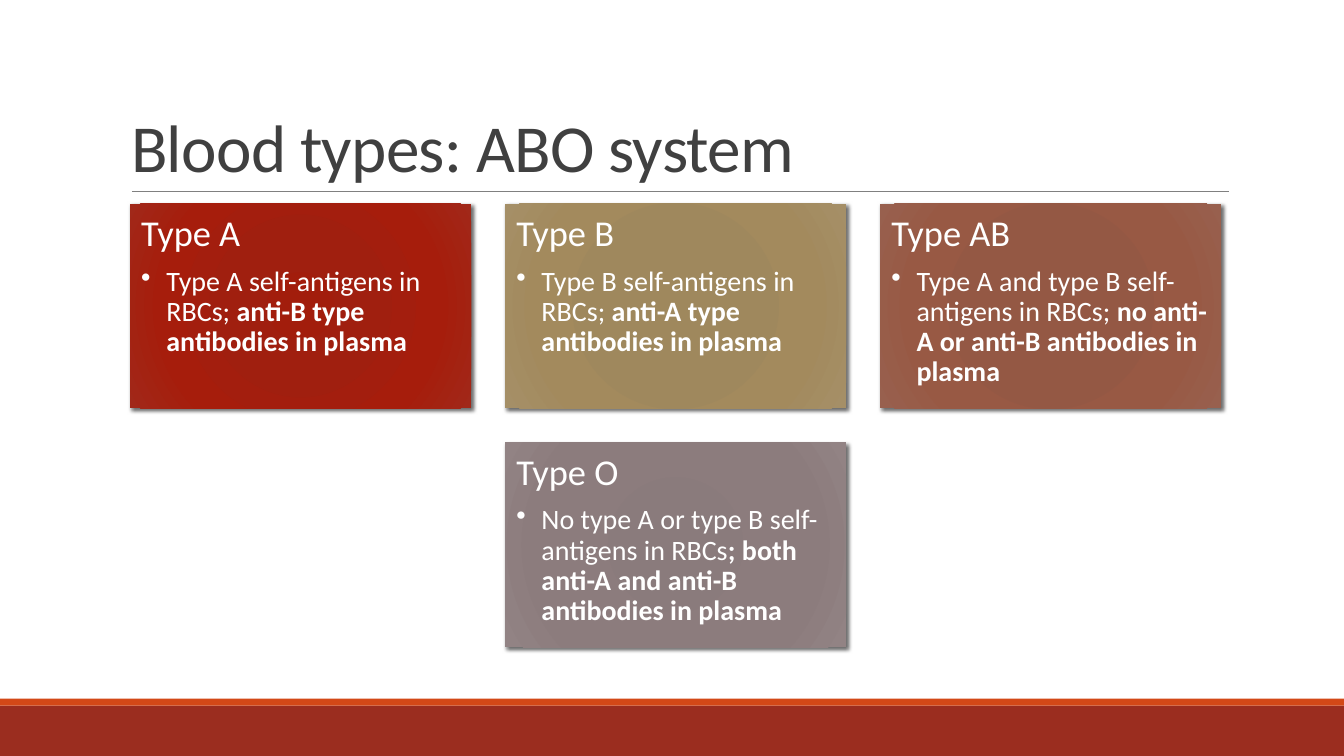
from lxml.etree import SubElement
from pptx import Presentation
from pptx.dml.color import RGBColor
from pptx.enum.shapes import MSO_CONNECTOR as LINE, MSO_SHAPE as SHAPE
from pptx.enum.text import MSO_ANCHOR as ANCHOR, MSO_AUTO_SIZE as FIT, PP_ALIGN as ALIGN
from pptx.oxml import parse_xml
from pptx.oxml.ns import nsdecls, qn
from pptx.util import Pt

WIDTH, HEIGHT = 960, 540
COLORS = {
    "title": "404040", "rule": "808080", "text": "FFFFFF",
    "band": "9B2D1F", "stripe": "D34817", "shadow": "000000",
}
STOPS = (0, 34, 70, 100)
CARD_WIDTH, CARD_HEIGHT = 243.6, 146.2
COLUMN_STEP, ROW_STEP = 267.9, 170.6

# Column, row, heading, plain text, bold text, gradient
BLOOD_TYPES = [
    (0, 0, "Type A", "Type A self-antigens in RBCs; ",
     "anti-B type antibodies in plasma",
     ("A21D0C", "A01F0F", "A61D0C", "A12819")),
    (1, 0, "Type B", "Type B self-antigens in RBCs; ",
     "anti-A type antibodies in plasma",
     ("9F875B", "9F885D", "A38A5D", "A58F67")),
    (2, 0, "Type AB", "Type A and type B self-antigens in RBCs; ",
     "no anti-A or anti-B antibodies in plasma",
     ("945742", "945844", "985944", "98604E")),
    (1, 1, "Type O", "No type A or type B self-antigens in RBCs",
     "; both anti-A and anti-B antibodies in plasma",
     ("89797A", "8A7B7C", "8C7C7D", "928384")),
]


def set_all(target, **values):
    for name, value in values.items():
        setattr(target, name, value)


def add_span(para, text, size, color, bold=False):
    span = para.add_run()
    span.text = text
    set_all(span.font, name="Calibri", size=Pt(size), bold=bold)
    span.font.color.rgb = RGBColor.from_string(COLORS[color])
    return span


def add_rectangle(page, box):
    shape = page.shapes.add_shape(SHAPE.RECTANGLE, *map(Pt, box))
    shape.shadow.inherit = False
    shape.line.fill.background()
    return shape


def add_footer(page, box):
    left, top, width, height = box
    stripe_height = 5
    parts = (("band", top + stripe_height, height - stripe_height),
             ("stripe", top, stripe_height))
    for color, part_top, part_height in parts:
        bar = add_rectangle(page, (left, part_top, width, part_height))
        bar.fill.solid()
        bar.fill.fore_color.rgb = RGBColor.from_string(COLORS[color])


def add_title(page, box):
    left, top, width, height = box
    title = page.shapes.title
    set_all(title, left=Pt(left), top=Pt(top), width=Pt(width), height=Pt(height))
    set_all(title.text_frame, vertical_anchor=ANCHOR.BOTTOM, word_wrap=True,
            auto_size=FIT.NONE)
    para = title.text_frame.paragraphs[0]
    set_all(para, alignment=ALIGN.LEFT, line_spacing=0.85)
    span = add_span(para, "Blood types: ABO system", 48, "title")
    span.font._element.set("spc", "-50")

    # Rule under the title
    bottom = top + height
    rule = page.shapes.add_connector(
        LINE.STRAIGHT, Pt(left + 7.9), Pt(bottom), Pt(left + width - 0.7), Pt(bottom))
    rule.line.width = Pt(0.5)
    rule.line.color.rgb = RGBColor.from_string(COLORS["rule"])
    SubElement(rule._element.spPr, qn("a:effectLst"))


def set_gradient(shape, colors):
    stops = "".join(
        f'<a:gs pos="{stop * 1000}"><a:srgbClr val="{color}"/></a:gs>'
        for stop, color in zip(STOPS, colors))
    gradient = parse_xml(
        f'<a:gradFill {nsdecls("a")} rotWithShape="1"><a:gsLst>{stops}</a:gsLst>'
        '<a:path path="circle"><a:fillToRect l="100000" t="100000" r="100000" '
        'b="100000"/></a:path></a:gradFill>')
    shape._element.spPr.find(qn("a:prstGeom")).addnext(gradient)


def set_shadow(shape):
    effects = shape._element.spPr.find(qn("a:effectLst"))
    effects.append(parse_xml(
        f'<a:outerShdw {nsdecls("a")} blurRad="{Pt(3)}" dist="{Pt(2)}" '
        f'dir="{45 * 60000}" algn="ctr" rotWithShape="0">'
        f'<a:srgbClr val="{COLORS["shadow"]}"><a:alpha val="60000"/></a:srgbClr>'
        '</a:outerShdw>'))


def add_card(page, box, heading, plain, bold, colors):
    card = add_rectangle(page, box)
    set_gradient(card, colors)
    set_shadow(card)
    frame = card.text_frame
    set_all(frame, word_wrap=True, vertical_anchor=ANCHOR.TOP,
            margin_left=Pt(8), margin_right=Pt(8),
            margin_top=Pt(8), margin_bottom=Pt(8))

    # Heading
    para = frame.paragraphs[0]
    set_all(para, alignment=ALIGN.LEFT, line_spacing=0.9, space_after=Pt(9.1))
    add_span(para, heading, 26, "text")

    # Bullet
    para = frame.add_paragraph()
    set_all(para, level=1, alignment=ALIGN.LEFT, line_spacing=0.9, space_after=Pt(3))
    props = para._p.get_or_add_pPr()
    props.set("marL", str(Pt(18)))
    props.set("indent", str(Pt(-18)))
    SubElement(props, qn("a:buChar"), char="•")
    add_span(para, plain, 20, "text")
    add_span(para, bold, 20, "text", bold=True)


def add_cards(page, left, top):
    for column, row, *content in BLOOD_TYPES:
        box = (left + column * COLUMN_STEP, top + row * ROW_STEP,
               CARD_WIDTH, CARD_HEIGHT)
        add_card(page, box, *content)


def main():
    deck = Presentation()
    set_all(deck, slide_width=Pt(WIDTH), slide_height=Pt(HEIGHT))
    page = deck.slides.add_slide(deck.slide_layouts.get_by_name("Title Only"))
    add_footer(page, (0, 499, WIDTH, 41))
    add_title(page, (86.4, 22.6, 792, 114.2))
    add_cards(page, 92.9, 145.5)
    deck.save("out.pptx")


if __name__ == "__main__":
    main()
